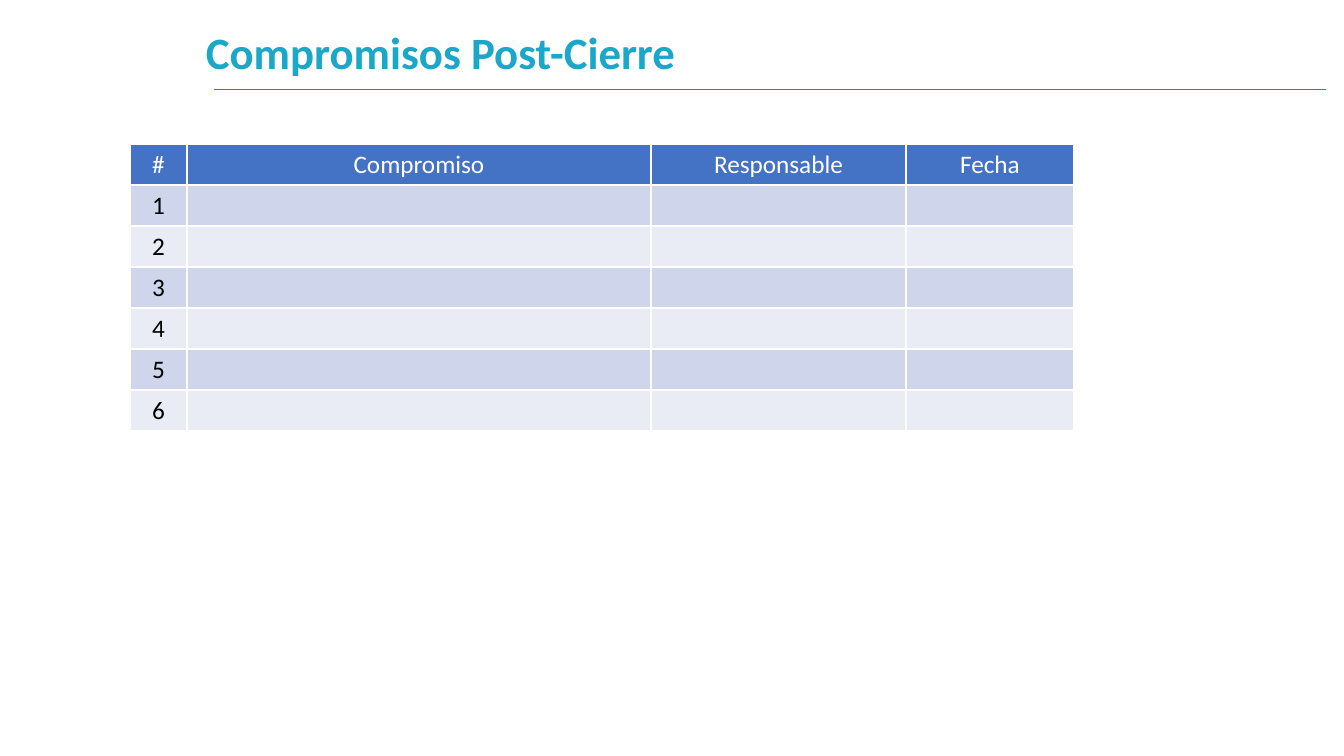
from dataclasses import dataclass

from lxml import etree
from pptx import Presentation
from pptx.dml.color import RGBColor
from pptx.enum.shapes import MSO_CONNECTOR
from pptx.enum.text import MSO_ANCHOR, PP_ALIGN
from pptx.oxml.ns import qn
from pptx.util import Pt

STRAIGHT = MSO_CONNECTOR.STRAIGHT
MIDDLE = MSO_ANCHOR.MIDDLE
LEFT, CENTER = PP_ALIGN.LEFT, PP_ALIGN.CENTER

HEADS = ["#", "Compromiso", "Responsable", "Fecha"]
WIDTHS = [57, 464, 255, 168]
COUNT = 6
ROW = 41


@dataclass(frozen=True)
class Theme:
    font: str = "Calibri"
    title: str = "1AA7C8"
    rule: str = "098CBF"
    head: str = "4472C4"
    odd: str = "CFD5EA"
    even: str = "E9EBF5"
    white: str = "FFFFFF"
    black: str = "000000"
    big: int = 32
    body: int = 18


THEME = Theme()


def px(n):
    return round(n * 914400 / 100.8)


def rgb(code):
    return RGBColor.from_string(code)


def write(frame, text, size=THEME.body, color=THEME.black, bold=False,
          align=LEFT, space=1.0):
    para = frame.paragraphs[0]
    para.alignment = align
    para.line_spacing = space
    run = para.add_run()
    run.text = text
    font = run.font
    font.name = THEME.font
    font.size = Pt(size)
    font.bold = bold
    font.color.rgb = rgb(color)


def add_title(slide, text, left, top, width, height):
    frame = slide.shapes.add_textbox(
        px(left), px(top), px(width), px(height)).text_frame
    frame.word_wrap = True
    frame.vertical_anchor = MIDDLE
    write(frame, text, size=THEME.big, color=THEME.title, bold=True, space=0.9)


def add_rule(slide, start, end, top):
    rule = slide.shapes.add_connector(
        STRAIGHT, px(start), px(top), px(end), px(top))
    rule.line.color.rgb = rgb(THEME.rule)
    rule.line.width = Pt(0.5)
    etree.SubElement(rule._element.spPr, qn("a:effectLst"))


def edge(cell):
    props = cell._tc.get_or_add_tcPr()
    for side in ("L", "R", "T", "B"):
        line = etree.SubElement(props, qn(f"a:ln{side}"), w=str(Pt(1)))
        fill = etree.SubElement(line, qn("a:solidFill"))
        etree.SubElement(fill, qn("a:srgbClr"), val=THEME.white)


def paint(cell, color):
    edge(cell)
    cell.fill.solid()
    cell.fill.fore_color.rgb = rgb(color)


def add_grid(slide, left, top):
    rows = [HEADS] + [[str(n), "", "", ""] for n in range(1, COUNT + 1)]
    table = slide.shapes.add_table(
        len(rows), len(HEADS), px(left), px(top),
        px(sum(WIDTHS)), px(ROW * len(rows))).table
    for col, width in zip(table.columns, WIDTHS):
        col.width = px(width)
    for r, texts in enumerate(rows):
        table.rows[r].height = px(ROW)
        shade = THEME.odd if r % 2 else THEME.even
        for c, text in enumerate(texts):
            cell = table.cell(r, c)
            paint(cell, shade if r else THEME.head)
            if text:
                write(cell.text_frame, text, align=CENTER,
                      color=THEME.black if r else THEME.white)


def main():
    deck = Presentation()
    deck.slide_width, deck.slide_height = px(1344), px(756)
    slide = deck.slides.add_slide(deck.slide_layouts[6])
    add_rule(slide, 214, 1326, 89)
    add_title(slide, "Compromisos Post-Cierre", 196, 27, 1110, 57)
    add_grid(slide, 130, 144)
    deck.save("out.pptx")


if __name__ == "__main__":
    main()
